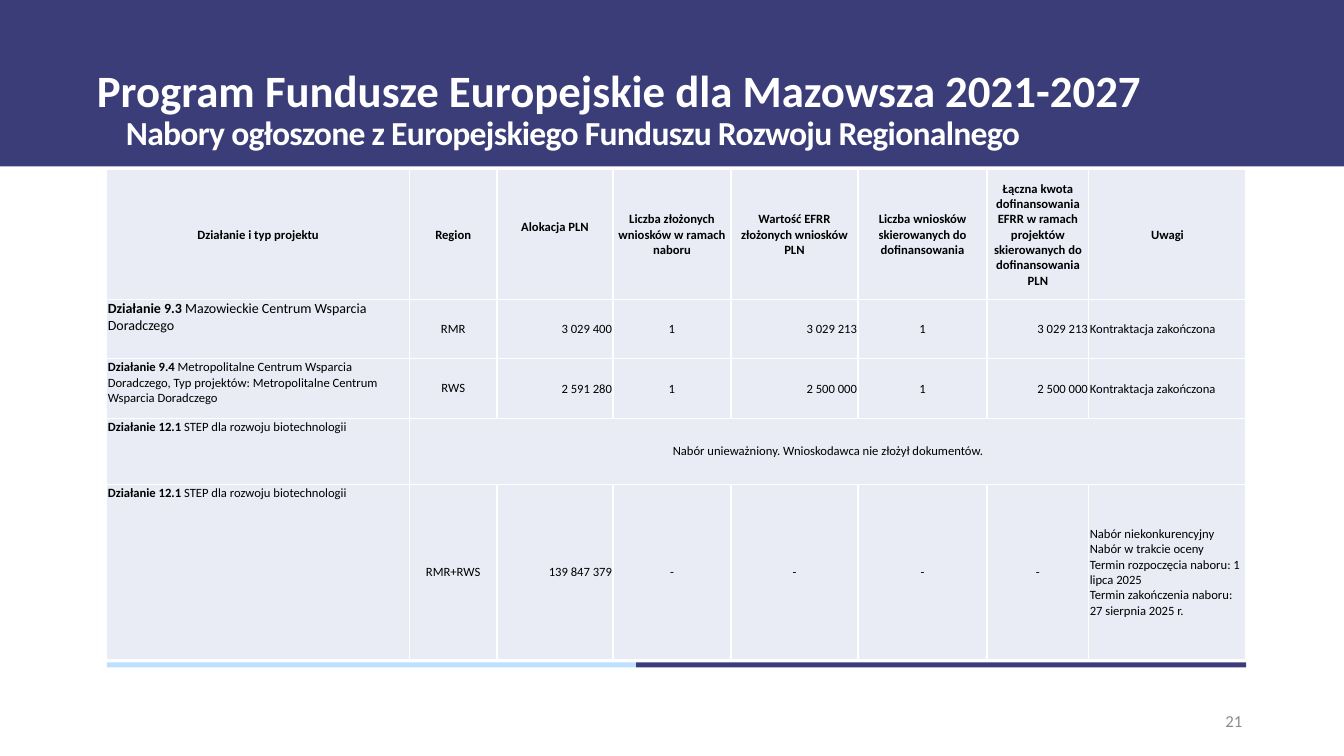
from dataclasses import dataclass

from lxml import etree
from pptx import Presentation
from pptx import util as u
from pptx.dml.color import RGBColor
from pptx.enum import shapes, text
from pptx.oxml import ns

CELL = u.Inches(0.01)
GRID_COLUMNS, GRID_ROWS = 1333, 750
LEFT, CENTER, RIGHT = text.PP_ALIGN.LEFT, text.PP_ALIGN.CENTER, text.PP_ALIGN.RIGHT


@dataclass(frozen=True)
class Theme:
    """Colours, font and type sizes of the slide."""
    font: str = "Calibri"
    navy: str = "3B3D79"
    sky: str = "BDE0FF"
    cell: str = "E9EBF5"
    white: str = "FFFFFF"
    black: str = "000000"
    grey: str = "8C8C8C"
    title: float = 32
    subtitle: float = 24
    number: float = 12
    lead: float = 10
    body: float = 9


@dataclass(frozen=True)
class Box:
    """A rectangle counted in grid columns and rows."""
    left: int
    top: int
    width: int
    height: int

    def inner(self, left, top, width, height):
        """Return a box placed relative to this one."""
        return Box(self.left + left, self.top + top, width, height)

    def lengths(self):
        """Return left, top, width and height as slide lengths."""
        return [CELL * count for count in (self.left, self.top, self.width, self.height)]


THEME = Theme()
COLUMNS = [300, 87, 115, 117, 126, 128, 101, 156]
ROWS = [129, 59, 59, 66, 173]
ALIGNMENTS = [LEFT, CENTER, RIGHT, CENTER, RIGHT, CENTER, RIGHT, LEFT]
HEADINGS = [
    "Działanie i typ projektu",
    "Region",
    "Alokacja PLN",
    "Liczba złożonych wniosków w ramach naboru",
    "Wartość EFRR złożonych wniosków\vPLN",
    "Liczba wniosków skierowanych do dofinansowania",
    "Łączna kwota dofinansowania EFRR w ramach projektów skierowanych do dofinansowania PLN",
    "Uwagi",
]
MEASURES = [
    ("Działanie 9.3 ", "Mazowieckie Centrum Wsparcia Doradczego"),
    ("Działanie 9.4 ", "Metropolitalne Centrum Wsparcia Doradczego, "
                       "Typ projektów: Metropolitalne Centrum Wsparcia Doradczego"),
    ("Działanie 12.1 ", "STEP dla rozwoju biotechnologii"),
    ("Działanie 12.1 ", "STEP dla rozwoju biotechnologii"),
]
RESULTS = [
    ["RMR", "3 029 400", "1", "3 029 213", "1", "3 029 213", "Kontraktacja zakończona"],
    ["RWS", "2 591 280", "1", "2 500 000", "1", "2 500 000", "Kontraktacja zakończona"],
    ["Nabór unieważniony. Wnioskodawca nie złożył dokumentów."],
    ["RMR+RWS", "139 847 379", "-", "-", "-", "-",
     "Nabór niekonkurencyjny\vNabór w trakcie oceny\n"
     "Termin rozpoczęcia naboru: 1 lipca 2025\n"
     "Termin zakończenia naboru: 27 sierpnia 2025 r."],
]


def style(span, size, color, bold=False):
    """Apply the theme font to a run."""
    span.font.name = THEME.font
    span.font.size = u.Pt(size)
    span.font.bold = bold
    span.font.color.rgb = RGBColor.from_string(color)


def write(frame, words, size, color, bold=False, align=LEFT):
    """Fill a text frame and format its runs."""
    frame.word_wrap = True
    frame.text = words
    for para in frame.paragraphs:
        para.alignment = align
        for span in para.runs:
            style(span, size, color, bold)


def add_bar(page, box, color):
    """Draw a plain filled rectangle."""
    bar = page.shapes.add_shape(shapes.MSO_SHAPE.RECTANGLE, *box.lengths())
    bar.shadow.inherit = False
    bar.fill.solid()
    bar.fill.fore_color.rgb = RGBColor.from_string(color)
    bar.line.fill.background()
    return bar


def add_header(page, box):
    """Place the band, the title and the subtitle."""
    title = page.shapes.title
    title.element.addprevious(add_bar(page, box, THEME.navy).element)
    title.left, title.top, title.width, title.height = box.inner(86, 20, 1150, 145).lengths()
    frame = title.text_frame
    write(frame, "Program Fundusze Europejskie dla Mazowsza 2021-2027",
          THEME.title, THEME.white, True)
    frame.auto_size = text.MSO_AUTO_SIZE.NONE
    frame.vertical_anchor = text.MSO_ANCHOR.MIDDLE
    frame.paragraphs[0].line_spacing = 0.9
    subtitle = page.shapes.add_textbox(*box.inner(115, 106, 1150, 63).lengths()).text_frame
    write(subtitle, "Nabory ogłoszone z Europejskiego Funduszu Rozwoju Regionalnego",
          THEME.subtitle, THEME.white, True)
    subtitle.paragraphs[0].runs[0].font._element.set("spc", "-50")


def format_cell(cell, inset):
    """Give a table cell its borders, fill, insets and anchor."""
    properties = cell._tc.get_or_add_tcPr()
    for side in ("a:lnL", "a:lnR", "a:lnT", "a:lnB"):
        line = etree.SubElement(properties, ns.qn(side), w=str(u.Pt(1)))
        fill = etree.SubElement(line, ns.qn("a:solidFill"))
        etree.SubElement(fill, ns.qn("a:srgbClr"), val=THEME.white)
    cell.fill.solid()
    cell.fill.fore_color.rgb = RGBColor.from_string(THEME.cell)
    cell.margin_left = cell.margin_right = cell.margin_top = inset
    cell.margin_bottom = 0
    cell.vertical_anchor = text.MSO_ANCHOR.MIDDLE


def write_measure(cell, label, detail, size):
    """Write a bold label followed by a regular description."""
    cell.vertical_anchor = text.MSO_ANCHOR.TOP
    write(cell.text_frame, label, size, THEME.black, True)
    span = cell.text_frame.paragraphs[0].add_run()
    span.text = detail
    style(span, size, THEME.black)


def add_calls_table(page, box):
    """Build the table of calls for proposals."""
    table = page.shapes.add_table(len(ROWS), len(COLUMNS), *box.lengths()).table
    table.first_row = table.horz_banding = False
    for column, width in zip(table.columns, COLUMNS):
        column.width = CELL * width
    for row, height in zip(table.rows, ROWS):
        row.height = CELL * height
    for row in range(len(ROWS)):
        for column in range(len(COLUMNS)):
            format_cell(table.cell(row, column), 0 if row and column == 1 else CELL)
    for column, heading in enumerate(HEADINGS):
        write(table.cell(0, column).text_frame, heading, THEME.body, THEME.black, True, CENTER)
    table.cell(0, HEADINGS.index("Alokacja PLN")).margin_bottom = CELL * 16
    for row, (measure, results) in enumerate(zip(MEASURES, RESULTS), 1):
        write_measure(table.cell(row, 0), *measure, THEME.lead if row == 1 else THEME.body)
        if len(results) == 1:
            table.cell(row, 1).merge(table.cell(row, len(COLUMNS) - 1))
        for column, result in enumerate(results, 1):
            align = CENTER if result == "-" else ALIGNMENTS[column]
            write(table.cell(row, column).text_frame, result, THEME.body, THEME.black, align=align)


def add_footer(page, box):
    """Place the two-colour rule and the slide number."""
    add_bar(page, box.inner(0, 0, 525, 5), THEME.sky)
    add_bar(page, box.inner(525, 0, box.width - 525, 5), THEME.navy)
    number = page.shapes.add_textbox(*box.inner(836, 38, 300, 40).lengths()).text_frame
    number.vertical_anchor = text.MSO_ANCHOR.MIDDLE
    write(number, "21", THEME.number, THEME.grey, align=RIGHT)


def main():
    """Build the deck and save it."""
    deck = Presentation()
    deck.slide_width, deck.slide_height = CELL * GRID_COLUMNS, CELL * GRID_ROWS
    page = deck.slides.add_slide(deck.slide_layouts.get_by_name("Title Only"))
    add_header(page, Box(0, 0, GRID_COLUMNS, 165))
    add_calls_table(page, Box(106, 168, sum(COLUMNS), sum(ROWS)))
    add_footer(page, Box(106, 657, sum(COLUMNS), 78))
    deck.save("out.pptx")


if __name__ == "__main__":
    main()
